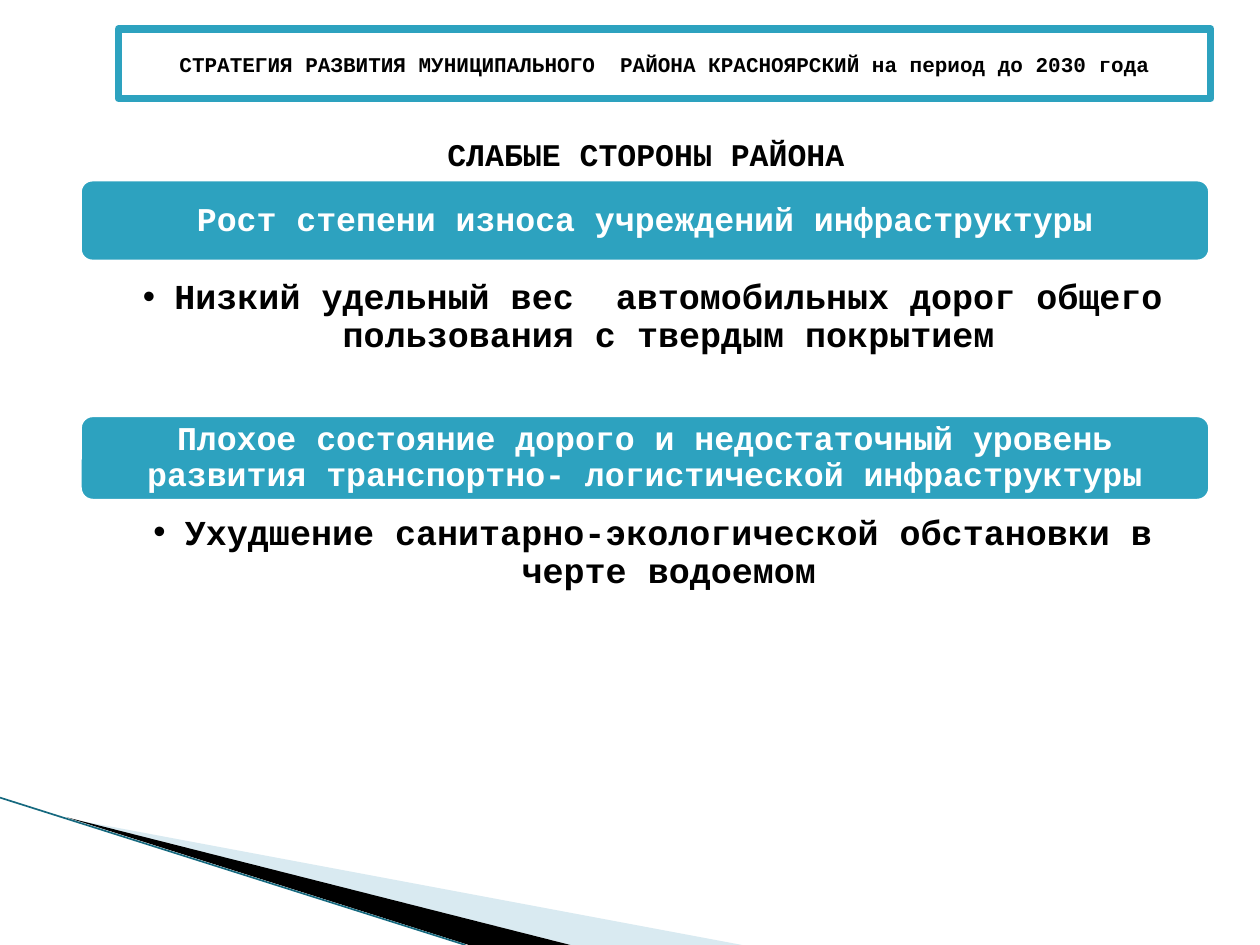
import pptx
import pptx.util
import pptx.dml.color
import pptx.enum.shapes
import pptx.enum.text
import pptx.oxml.ns
import lxml.etree

Pt = pptx.util.Pt
ANCHOR = pptx.enum.text.MSO_ANCHOR
SHAPE = pptx.enum.shapes.MSO_SHAPE

THEME = {
    "font": "Courier New", "bullet_font": "Arial",
    "accent": "2DA2BF", "light": "FFFFFF", "dark": "000000",
    "pale": "A0CBDC", "edge": "16697F",
    "banner_size": 12, "title_size": 18, "card_size": 19, "bullet_size": 20,
    "border": 4.33, "edge_width": 0.95,
}

BANNER = "СТРАТЕГИЯ РАЗВИТИЯ МУНИЦИПАЛЬНОГО  РАЙОНА КРАСНОЯРСКИЙ на период до 2030 года"
TITLE = "СЛАБЫЕ СТОРОНЫ РАЙОНА"
# heading, its top and height, bullet below, its top and height
WEAKNESSES = [
    ("Рост степени износа учреждений инфраструктуры", 101.5, 49,
     "Низкий удельный вес  автомобильных дорог общего пользования с твердым покрытием",
     157.7, 63.4),
    ("Плохое состояние дорого и недостаточный уровень развития "
     "транспортно- логистической инфраструктуры", 236.2, 51,
     "Ухудшение санитарно-экологической обстановки в черте водоемом", 292.3, 81.4),
]
CARD_LEFT, CARD_WIDTH = 44.6, 648
# corner points, colour, opacity in percent
WEDGES = [
    ([(39.6, 468.5), (424, 540), (326, 540)], "pale", 40),
    ([(38.2, 467.3), (325.8, 540), (267.8, 540)], "dark", 100),
]
EDGE = (0, 455.8, 266, 540)


def color(name):
    return pptx.dml.color.RGBColor.from_string(THEME[name])


def add_xml(parent, tag, **attributes):
    return lxml.etree.SubElement(parent, pptx.oxml.ns.qn(tag), attributes)


def write(s, text, size, ink, anchor, insets, spacing=1.0, bullet=False):
    """Fill a shape with one centred bold paragraph."""
    tf = s.text_frame
    tf.text = text
    tf.word_wrap = True
    tf.auto_size = pptx.enum.text.MSO_AUTO_SIZE.NONE
    tf.vertical_anchor = anchor
    tf.margin_left, tf.margin_top, tf.margin_right, tf.margin_bottom = map(Pt, insets)
    p = tf.paragraphs[0]
    p.alignment = pptx.enum.text.PP_ALIGN.CENTER
    p.line_spacing = spacing
    if bullet:
        pPr = p._p.get_or_add_pPr()
        pPr.set("marL", str(Pt(18)))
        pPr.set("indent", str(-Pt(18)))
        add_xml(pPr, "a:buFont", typeface=THEME["bullet_font"])
        add_xml(pPr, "a:buChar", char="•")
    font = p.runs[0].font
    font.name, font.size, font.bold = THEME["font"], Pt(THEME[size]), True
    font.color.rgb = color(ink)


def add_box(slide, kind, box, fill, line):
    s = slide.shapes.add_shape(kind, *map(Pt, box))
    s.shadow.inherit = False
    s.fill.solid()
    s.fill.fore_color.rgb = color(fill)
    s.line.color.rgb = color(line)
    s.line.width = Pt(THEME["border"])
    return s


def add_wedge(slide, points, fill, opacity):
    builder = slide.shapes.build_freeform(*points[0], scale=Pt(1))
    builder.add_line_segments(points[1:], close=True)
    s = builder.convert_to_shape()
    s.shadow.inherit = False
    s.fill.solid()
    s.fill.fore_color.rgb = color(fill)
    s.line.fill.background()
    if opacity < 100:
        rgb = s._element.spPr.find(".//" + pptx.oxml.ns.qn("a:srgbClr"))
        add_xml(rgb, "a:alpha", val=str(opacity * 1000))


def add_edge(slide):
    s = slide.shapes.add_connector(
        pptx.enum.shapes.MSO_CONNECTOR.STRAIGHT, *map(Pt, EDGE))
    s.line.color.rgb = color("edge")
    s.line.width = Pt(THEME["edge_width"])
    add_xml(s._element.spPr, "a:effectLst")


def main():
    prs = pptx.Presentation()
    prs.slide_width, prs.slide_height = Pt(720), Pt(540)
    slide = prs.slides.add_slide(prs.slide_layouts[5])

    for wedge in WEDGES:
        add_wedge(slide, *wedge)
    add_edge(slide)

    banner = add_box(slide, SHAPE.RECTANGLE, (67.7, 16.6, 624.2, 39.6), "light", "accent")
    write(banner, BANNER, "banner_size", "dark", ANCHOR.MIDDLE, (7.2, 3.6, 7.2, 3.6))

    title = slide.shapes.title
    title.left, title.top, title.width, title.height = map(Pt, (236.2, 73.4, 265.7, 29))
    write(title, TITLE, "title_size", "dark", ANCHOR.TOP, (7.2, 3.6, 7.2, 3.6))

    for heading, top, height, detail, detail_top, detail_height in WEAKNESSES:
        card = add_box(slide, SHAPE.ROUNDED_RECTANGLE,
                       (CARD_LEFT, top, CARD_WIDTH, height), "accent", "light")
        write(card, heading, "card_size", "light", ANCHOR.MIDDLE, (3.6,) * 4, 0.9)
        box = slide.shapes.add_textbox(
            *map(Pt, (CARD_LEFT, detail_top, CARD_WIDTH, detail_height)))
        write(box, detail, "bullet_size", "dark", ANCHOR.TOP, (20.9, 2, 11.5, 2), 0.9, True)

    prs.save("out.pptx")


if __name__ == "__main__":
    main()
